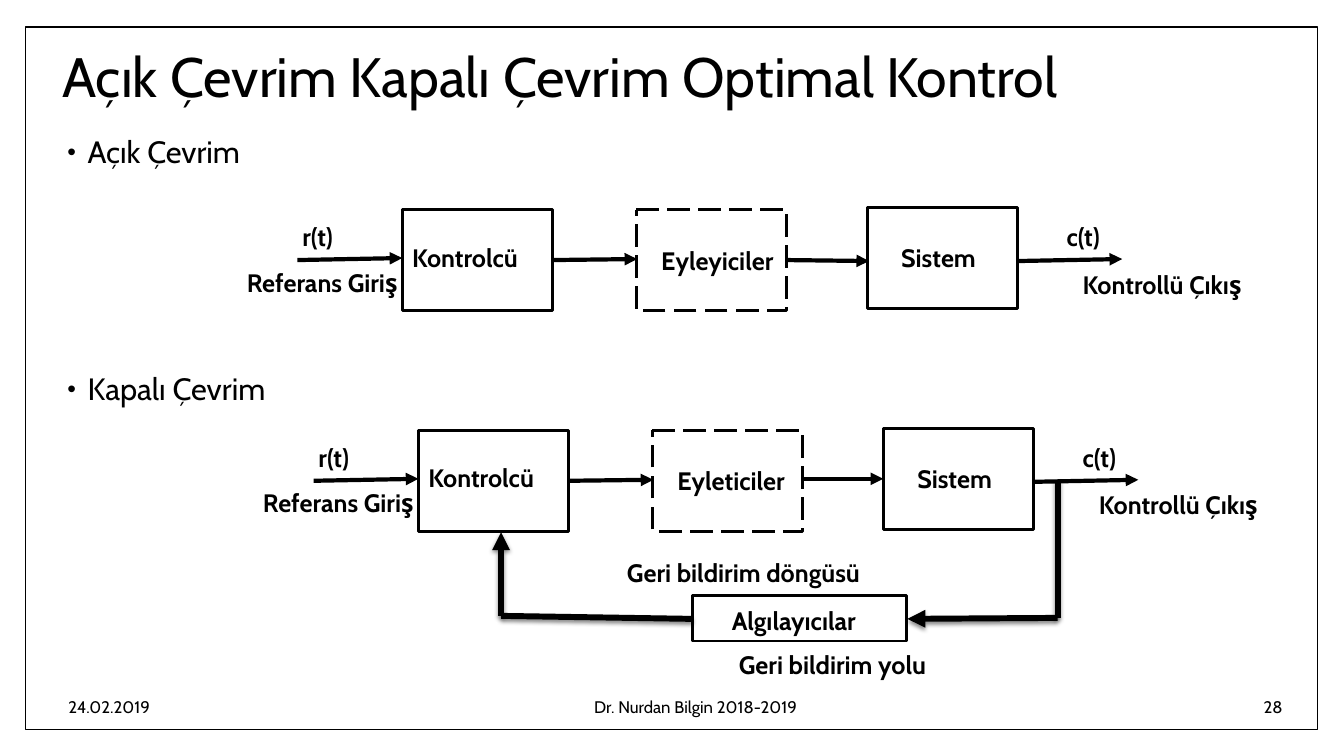
from lxml import etree
from pptx import Presentation
from pptx import util as u
from pptx.dml.color import RGBColor
from pptx.enum import dml, shapes, text
from pptx.oxml import ns

SCALE = 9144  # EMU per px, 100 px to the inch
BLACK = RGBColor(0, 0, 0)
WHITE = RGBColor(255, 255, 255)
FONT = "Cabin"
THIN, THICK = 3, 4.25
LEFT, CENTER, RIGHT = text.PP_ALIGN.LEFT, text.PP_ALIGN.CENTER, text.PP_ALIGN.RIGHT
TOP, MIDDLE = text.MSO_ANCHOR.TOP, text.MSO_ANCHOR.MIDDLE


def px(*lengths):
    return [u.Emu(length * SCALE) for length in lengths]


def apply(target, values):
    for name, value in values.items():
        setattr(target, name, value)


def add_xml(parent, tag, **attributes):
    child = etree.SubElement(parent, ns.qn(tag))
    for name, value in attributes.items():
        child.set(name, str(value))
    return child


def add_text(items, at, words, size=18, bold=False, align=LEFT, anchor=TOP):
    box = items.add_textbox(*px(*at))
    apply(box.text_frame, {"word_wrap": True, "vertical_anchor": anchor})
    para = box.text_frame.paragraphs[0]
    para.alignment = align
    span = para.add_run()
    span.text = words
    apply(span.font, {"name": FONT, "size": u.Pt(size), "bold": bold})
    span.font.color.rgb = BLACK
    return para


def add_label(items, left, top, width, words):
    add_text(items, (left, top, width, 40), words, bold=True)


def add_bullet(items, at, words):
    para = add_text(items, at, words, size=22)
    apply(para, {"line_spacing": 0.9, "space_before": u.Pt(14)})
    props = para._p.get_or_add_pPr()
    props.set("marL", str(25 * SCALE))
    props.set("indent", str(-20 * SCALE))
    add_xml(add_xml(props, "a:buClr"), "a:srgbClr", val=BLACK)
    add_xml(props, "a:buSzPct", val=80000)
    add_xml(props, "a:buFont", typeface="Arial")
    add_xml(props, "a:buChar", char="•")


def add_block(items, at, kind=shapes.MSO_SHAPE.FLOWCHART_PROCESS, width=2, dash=None):
    block = items.add_shape(kind, *px(*at))
    block.shadow.inherit = False
    block.fill.solid()
    block.fill.fore_color.rgb = WHITE
    block.line.color.rgb = BLACK
    apply(block.line, {"width": u.Pt(width), "dash_style": dash})


def add_line(items, start, end, width=THIN, arrow=True, shadow=False):
    line = items.add_connector(shapes.MSO_CONNECTOR.STRAIGHT, *px(*start, *end))
    line.line.color.rgb = BLACK
    line.line.width = u.Pt(width)
    if arrow:
        add_xml(line.line._get_or_add_ln(), "a:tailEnd", type="triangle")
    effects = add_xml(line._element.spPr, "a:effectLst")
    if shadow:
        cast = add_xml(effects, "a:outerShdw", blurRad=u.Pt(3), dist=u.Pt(2),
                       dir=90 * 60000, rotWithShape=0)
        add_xml(add_xml(cast, "a:srgbClr", val=BLACK), "a:alpha", val=45000)


def add_chain(items, dx, dy, actuator):
    """Controller, actuator and system in a row, with input and output."""
    # Blocks
    for left, top, dash in ((399, 208, None),
                            (631, 208, dml.MSO_LINE.LONG_DASH),
                            (860, 206, None)):
        add_block(items, (left + dx, top + dy, 149, 100), dash=dash)

    # Names and signals
    for left, top, width, words in ((399, 235, 149, "Kontrolcü"),
                                    (646, 238, 149, actuator),
                                    (884, 236, 149, "Sistem"),
                                    (1048, 215, 71, "c(t)"),
                                    (290, 215, 71, "r(t)"),
                                    (1064, 262, 198, "Kontrollü Çıkış"),
                                    (235, 260, 198, "Referans Giriş")):
        add_label(items, left + dx, top + dy, width, words)

    # Signal arrows
    for x1, y1, x2, y2 in ((295, 258, 399, 256),
                           (548, 258, 632, 257),
                           (1009, 259, 1113, 257)):
        add_line(items, (x1 + dx, y1 + dy), (x2 + dx, y2 + dy))


def add_feedback(items):
    """Path from the output through the sensors back to the controller."""
    add_line(items, (1049, 476), (1049, 613), THICK, arrow=False, shadow=True)
    add_block(items, (687, 591, 212, 45))
    add_label(items, 716, 596, 149, "Algılayıcılar")
    add_line(items, (1049, 613), (900, 614), THICK, shadow=True)
    add_line(items, (687, 614), (497, 611), THICK, arrow=False, shadow=True)
    add_line(items, (497, 611), (497, 528), THICK, shadow=True)
    add_label(items, 723, 639, 326, "Geri bildirim yolu")
    add_label(items, 612, 548, 357, "Geri bildirim döngüsü")


def main():
    deck = Presentation()
    deck.slide_width, deck.slide_height = px(1333, 750)
    page = deck.slides.add_slide(deck.slide_layouts[6])
    items = page.shapes

    # Frame, title and headings
    add_block(items, (25, 27, 1282, 697), shapes.MSO_SHAPE.RECTANGLE, width=1)
    title = add_text(items, (52, 43, 1225, 72),
                     "Açık Çevrim Kapalı Çevrim Optimal Kontrol",
                     size=39.6, anchor=MIDDLE)
    title.line_spacing = 0.9
    add_bullet(items, (52, 131, 593, 54), "Açık Çevrim")
    add_bullet(items, (52, 366, 592, 63), "Kapalı Çevrim")

    # Footer
    for left, width, words, align in ((58, 255, "24.02.2019", LEFT),
                                      (432, 516, "Dr. Nurdan Bilgin 2018-2019", CENTER),
                                      (1095, 187, "28", RIGHT)):
        add_text(items, (left, 681, width, 40), words, 12, align=align, anchor=MIDDLE)

    # Open loop
    open_loop = items.add_group_shape().shapes
    add_chain(open_loop, 0, 0, "Eyleyiciler")
    add_line(open_loop, (780, 258), (862, 259))

    # Closed loop
    closed_loop = items.add_group_shape().shapes
    add_chain(closed_loop, 16, 219, "Eyleticiler")
    add_feedback(closed_loop)
    add_line(items, (796, 475), (876, 475))

    deck.save("out.pptx")


if __name__ == "__main__":
    main()
